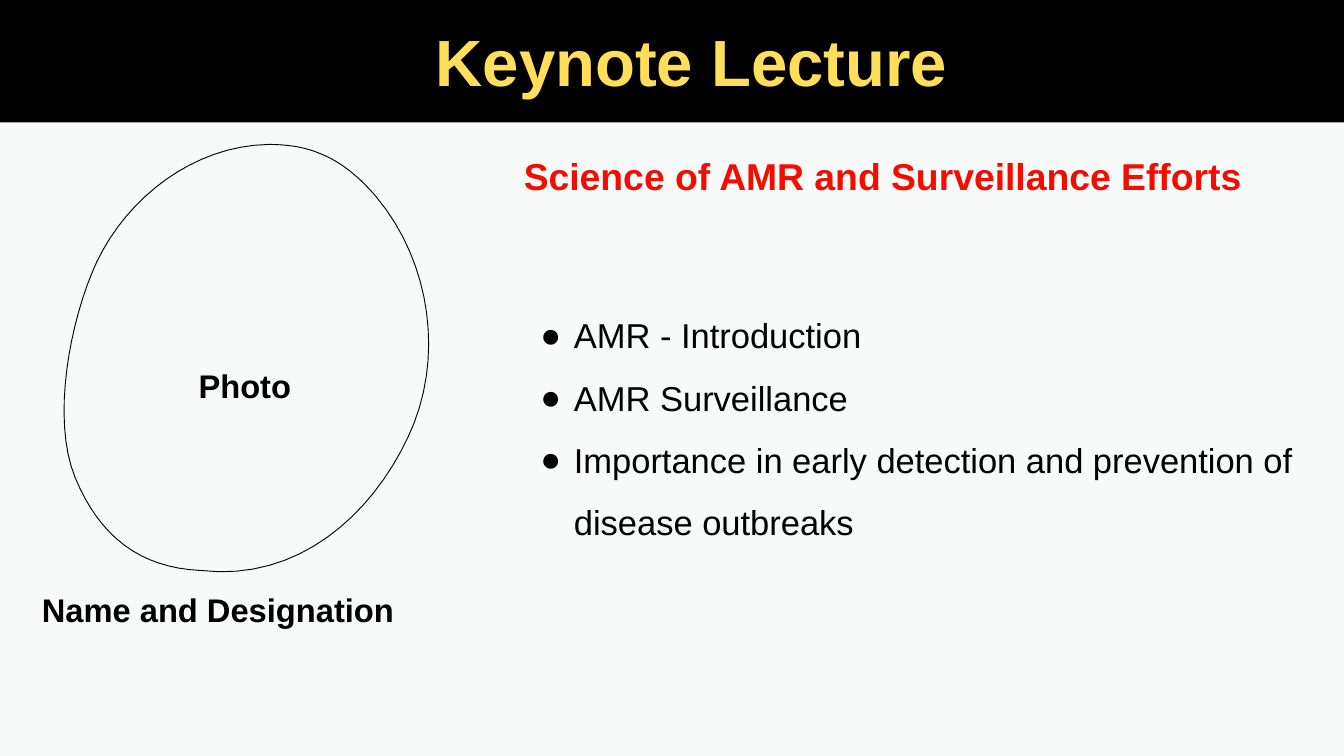
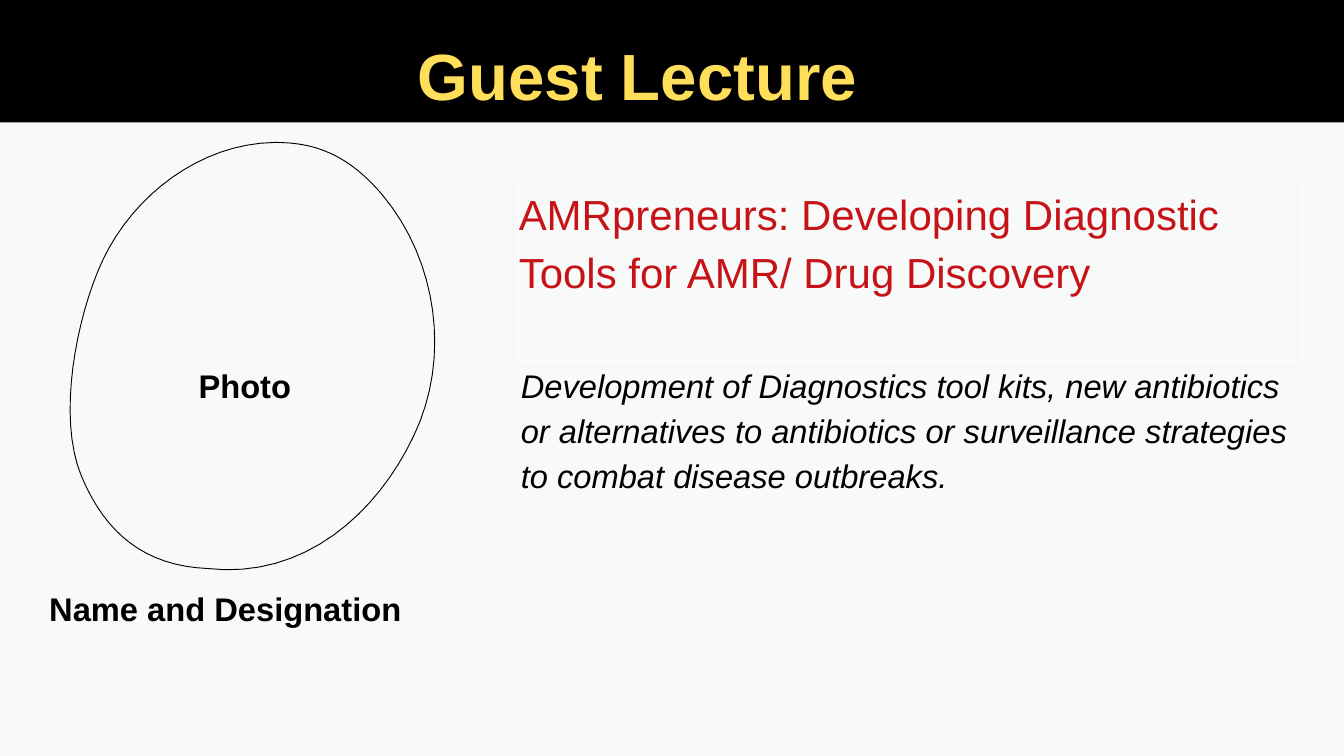
from lxml import etree
from pptx import Presentation
from pptx.dml.color import RGBColor
from pptx.enum.shapes import MSO_SHAPE
from pptx.enum.text import MSO_ANCHOR, MSO_AUTO_SIZE, PP_ALIGN
from pptx.oxml.ns import qn
from pptx.util import Inches, Pt

RECT = MSO_SHAPE.RECTANGLE
TOP = MSO_ANCHOR.TOP
FIXED = MSO_AUTO_SIZE.NONE
LEFT, CENTER = PP_ALIGN.LEFT, PP_ALIGN.CENTER

FONT = "Arial"
COLORS = {
    "page": "F8F9F9",
    "ink": "000000",
    "title": "FFDE59",
    "red": "F10E01",
    "crimson": "C51317",
    "frame": "FFFFFF",
}

# Photo outline: a start point, then cubic curves (two handles, one end).
START = (5.6, 2.93)
CURVES = [
    ((5.37, 2.66), (5.09, 2.41), (4.75, 2.28)),
    ((4.51, 2.18), (4.25, 2.15), (3.99, 2.15)),
    ((2.89, 2.17), (1.9, 2.93), (1.44, 3.9)),
    ((1.04, 4.76), (0.76, 6.24), (1.12, 7.11)),
    ((1.48, 7.98), (2.08, 8.45), (2.99, 8.49)),
    ((4.44, 8.66), (5.53, 7.66), (6.07, 6.51)),
    ((6.62, 5.36), (6.42, 3.91), (5.6, 2.93)),
]
STEPS = 16


def color(name):
    return RGBColor.from_string(COLORS[name])


def trace(dx, dy):
    """Return points along the photo outline, shifted by dx and dy inches."""
    points, a = [], START
    for b, c, d in CURVES:
        for step in range(1, STEPS + 1):
            t = step / STEPS
            u = 1 - t
            x, y = (u**3 * p + 3 * u * u * t * q + 3 * u * t * t * r + t**3 * s
                    for p, q, r, s in zip(a, b, c, d))
            points.append((Inches(x + dx), Inches(y + dy)))
        a = d
    return points


class Deck:
    """Holds the shared style and the current slide."""

    def __init__(self):
        self.prs = Presentation()
        self.prs.slide_width = Inches(20)
        self.prs.slide_height = Inches(11.25)
        fill = self.prs.slide_master.background.fill
        fill.solid()
        fill.fore_color.rgb = color("page")
        self.slide = None

    def start(self, title, box):
        """Add a slide with the black band and its title."""
        self.slide = self.prs.slides.add_slide(self.prs.slide_layouts[1])
        band = self.rect((-0.41, -0.03, 21.4, 1.85))
        band.fill.solid()
        band.fill.fore_color.rgb = color("ink")
        band.line.fill.background()
        self.slide.shapes._spTree.insert(2, band._element)
        self.place(self.slide.shapes.title, box)
        self.text(self.slide.shapes.title, [title], 70, "title",
                  align=CENTER, bold=True)

    def rect(self, box):
        shape = self.slide.shapes.add_shape(RECT, *map(Inches, box))
        shape.shadow.inherit = False
        return shape

    def place(self, shape, box):
        shape.left, shape.top, shape.width, shape.height = map(Inches, box)

    def text(self, shape, lines, size, tint, align=LEFT, space=1.0,
             bold=False, italic=False):
        frame = shape.text_frame
        frame.word_wrap = True
        frame.auto_size = FIXED
        frame.vertical_anchor = TOP
        frame.margin_left = frame.margin_right = 0
        frame.margin_top = frame.margin_bottom = 0
        for i, line in enumerate(lines):
            para = frame.add_paragraph() if i else frame.paragraphs[0]
            para.alignment = align
            para.line_spacing = space
            para.space_before = Pt(0)
            run = para.add_run()
            run.text = line
            font = run.font
            font.name, font.size = FONT, Pt(size)
            font.bold, font.italic = bold, italic
            font.color.rgb = color(tint)

    def label(self, text, box, size=35, tint="ink"):
        shape = self.slide.shapes.add_textbox(*map(Inches, box))
        self.text(shape, [text], size, tint, CENTER, 1.2, bold=True)

    def frame(self, text, box):
        shape = self.rect(box)
        shape.fill.background()
        shape.line.color.rgb = color("frame")
        shape.line.width = Pt(0.75)
        self.text(shape, [text], 45, "crimson", space=1.15)

    def body(self, lines, box, size, space, mark=None, italic=False):
        """Fill the body placeholder, with bullets if a mark is given."""
        shape = self.slide.placeholders[1]
        self.place(shape, box)
        self.text(shape, lines, size, "ink", space=space, italic=italic)
        for para in shape.text_frame.paragraphs:
            props = para._p.get_or_add_pPr()
            props.set("marL", str(Inches(0.5 if mark else 0)))
            props.set("indent", str(Inches(-0.51 if mark else 0)))
            if mark:
                tint = etree.SubElement(props, qn("a:buClr"))
                etree.SubElement(tint, qn("a:srgbClr"), val=COLORS["ink"])
                etree.SubElement(props, qn("a:buChar"), char=mark)
            else:
                etree.SubElement(props, qn("a:buNone"))

    def photo(self, dx=0, dy=0):
        points = trace(dx, dy)
        outline = self.slide.shapes.build_freeform(*points[-1])
        outline.add_line_segments(points, close=True)
        shape = outline.convert_to_shape()
        shape.shadow.inherit = False
        shape.fill.background()
        shape.line.color.rgb = color("ink")
        shape.line.width = Pt(1)
        self.label("Photo", (-1.24, 5.33, 9.77, 0.59))


def main():
    deck = Deck()

    deck.start("Keynote Lecture", (6.04, 0.31, 8.5, 1.18))
    deck.photo()
    deck.label("Science of AMR and Surveillance Efforts",
               (6.27, 2.15, 13.73, 0.67), 40, "red")
    deck.label("Name and Designation", (-1.5, 8.66, 9.49, 0.59))
    deck.body(["AMR - Introduction",
               "AMR Surveillance",
               "Importance in early detection and prevention of "
               "disease outbreaks"],
              (8.04, 4.37, 11.5, 3.97), 37, 1.5, mark="●")

    deck.start("Guest Lecture", (5.14, 0.52, 8.69, 1.18))
    deck.photo(0.09, -0.03)
    deck.frame("AMRpreneurs: Developing Diagnostic Tools for AMR/ "
               "Drug Discovery", (7.72, 2.69, 11.66, 2.67))
    deck.label("Name and Designation", (-1.53, 8.64, 9.77, 0.59))
    deck.body(["Development of Diagnostics tool kits, new antibiotics or "
               "alternatives to antibiotics or surveillance strategies to "
               "combat disease outbreaks."],
              (7.75, 5.35, 11.66, 3.64), 35, 1.15, italic=True)

    deck.prs.save("out.pptx")


if __name__ == "__main__":
    main()
